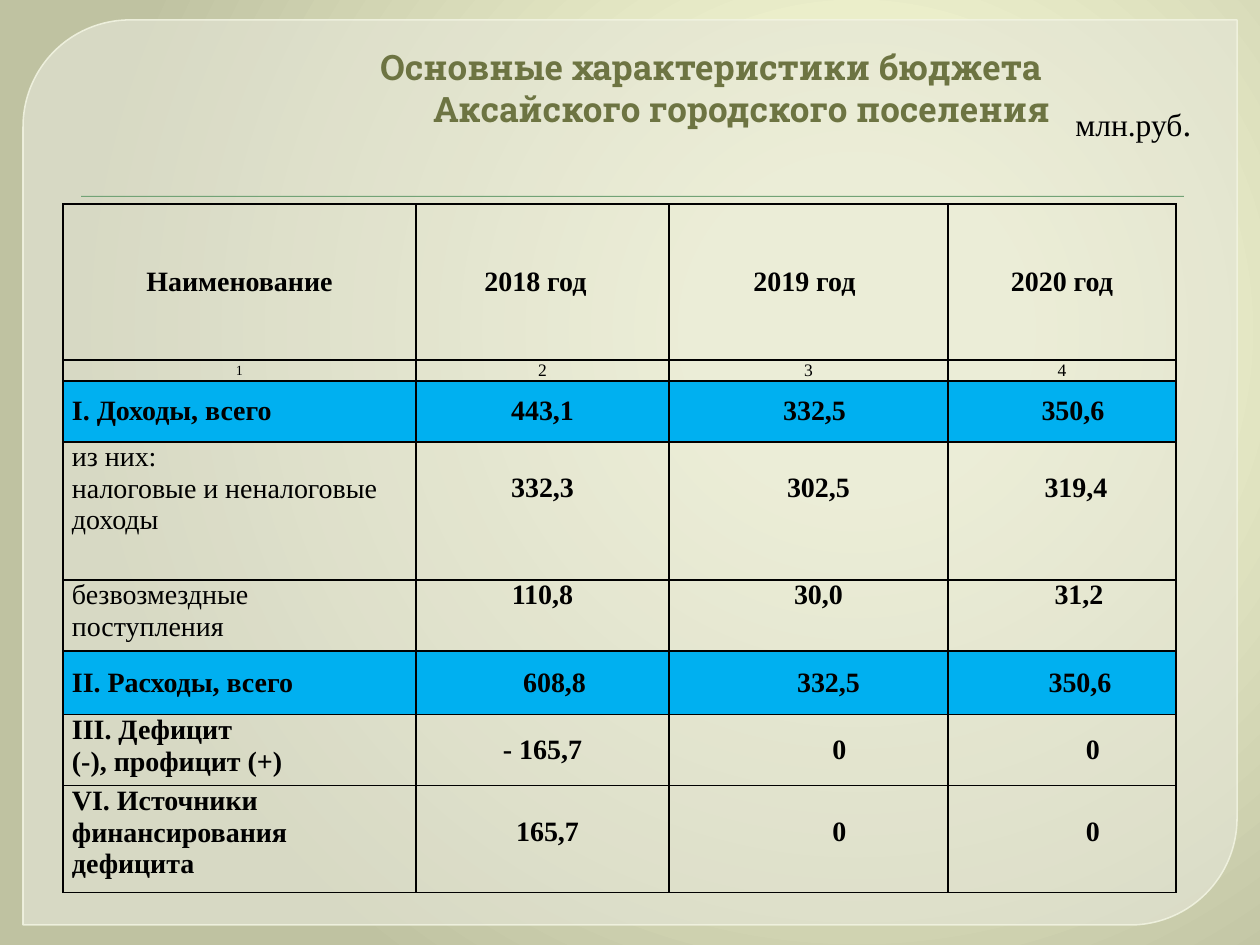
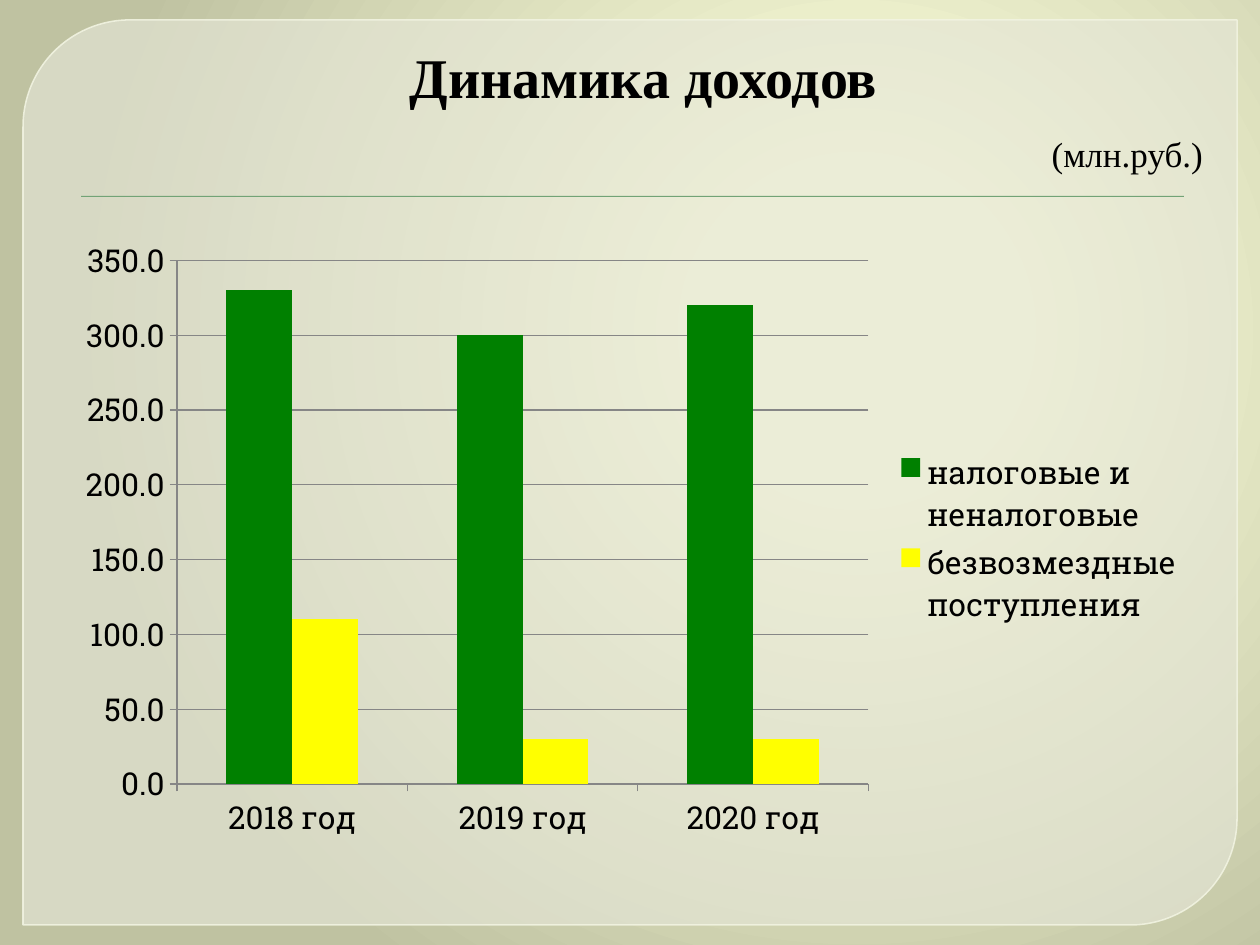
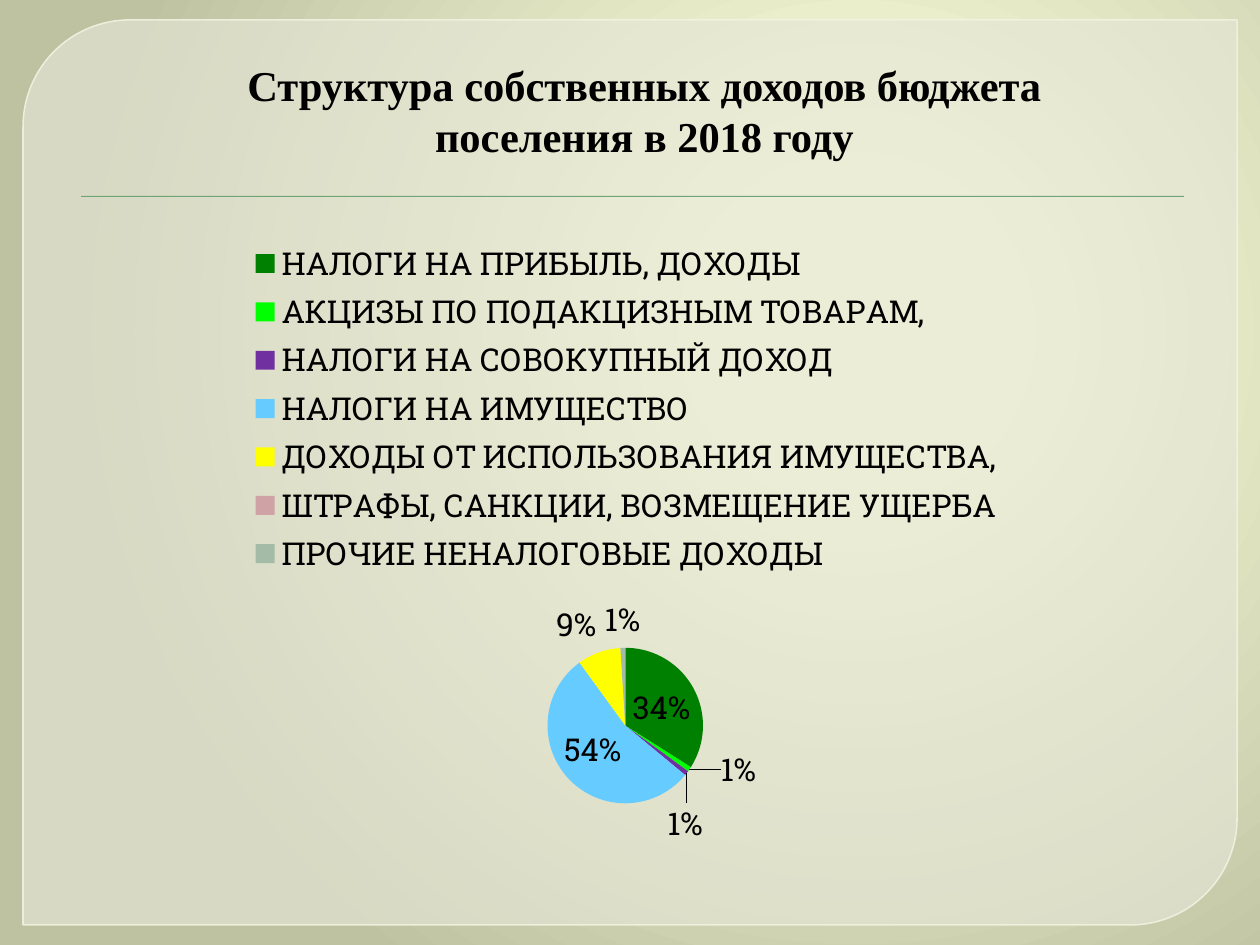
import pptx
import pptx.chart.data
import pptx.dml.color
import pptx.enum.chart
import pptx.enum.shapes
import pptx.enum.text
import pptx.oxml
import pptx.oxml.ns
import pptx.util

RGB = pptx.dml.color.RGBColor
ALIGN = pptx.enum.text.PP_ALIGN
ANCHOR = pptx.enum.text.MSO_ANCHOR
SHAPE = pptx.enum.shapes.MSO_SHAPE
CHART = pptx.enum.chart

PX = 914400 / 126  # EMU in one px
BLACK = RGB(0x00, 0x00, 0x00)
OLIVE = RGB(0x6D, 0x74, 0x42)
PANEL = RGB(0xE5, 0xE6, 0xD7)
PANEL_EDGE = RGB(0xF2, 0xF4, 0xE2)
RULE = RGB(0x72, 0xA3, 0x76)
TOTAL_ROW = RGB(0x00, 0xB0, 0xF0)
GRID = RGB(0x86, 0x86, 0x86)
GREEN = RGB(0x00, 0x80, 0x00)
YELLOW = RGB(0xFF, 0xFF, 0x00)
SLICES = [GREEN, RGB(0x00, 0xFF, 0x00), RGB(0x70, 0x30, 0xA0), RGB(0x66, 0xCC, 0xFF),
          YELLOW, RGB(0xCF, 0xA3, 0xA5), RGB(0xA3, 0xBB, 0xA7)]
GRADIENT = [(0, "FBFED9"), (20, "F9FCD8"), (100, "BFC2A1")]
SERIF, SLAB = "Times New Roman", "Roboto Slab"

CHART_BOX = (63, 227, 1134, 624)
LINE = 31  # height of one table text line
YEARS = ["2018 год", "2019 год", "2020 год"]


def emu(*lengths):
    return [pptx.util.Emu(round(n * PX)) for n in lengths]


def add_text(p, text, size=16, font=SERIF, color=BLACK, bold=False, align=None):
    r = p.add_run()
    r.text = text
    r.font.size = pptx.util.Pt(size)
    r.font.name = font
    r.font.bold = bold
    r.font.color.rgb = color
    if align is not None:
        p.alignment = align


def paragraphs(tf, count):
    return [tf.paragraphs[0]] + [tf.add_paragraph() for _ in range(count - 1)]


def set_margins(target, left, top, right, bottom):
    (target.margin_left, target.margin_top,
     target.margin_right, target.margin_bottom) = emu(left, top, right, bottom)


def set_alpha(fill_parent, percent):
    color = fill_parent.xpath("./a:solidFill/a:srgbClr")[0]
    color.append(pptx.oxml.parse_xml(
        f'<a:alpha {pptx.oxml.ns.nsdecls("a")} val="{percent * 1000}"/>'))


def set_background(master):
    master.background.fill.gradient()
    old = master.element.xpath(".//p:bgPr/a:gradFill")[0]
    stops = "".join(f'<a:gs pos="{pos * 1000}"><a:srgbClr val="{color}"/></a:gs>'
                    for pos, color in GRADIENT)
    old.getparent().replace(old, pptx.oxml.parse_xml(
        f'<a:gradFill {pptx.oxml.ns.nsdecls("a")}><a:gsLst>{stops}</a:gsLst>'
        '<a:path path="circle"><a:fillToRect l="68000" t="35000" r="32000" b="65000"/>'
        '</a:path></a:gradFill>'))


def add_plain_shape(s, kind, box, color):
    sp = s.shapes.add_shape(kind, *emu(*box))
    sp.shadow.inherit = False
    sp.fill.solid()
    sp.fill.fore_color.rgb = color
    sp.line.fill.background()
    return sp


def decorate_layout(layout, s):
    """Draw the panel and the rule on a slide and move them to its layout."""
    panel = add_plain_shape(s, SHAPE.ROUND_2_DIAG_RECTANGLE, (23, 20, 1214, 905), PANEL)
    panel.adjustments[0], panel.adjustments[1] = 0.118, 0
    panel.line.color.rgb = PANEL_EDGE
    panel.line.width = pptx.util.Pt(0.87)
    set_alpha(panel._element.spPr, 65)
    set_alpha(panel._element.spPr.ln, 88)
    rule = add_plain_shape(s, SHAPE.RECTANGLE, (81, 196, 1103, 1), RULE)
    for i, sp in enumerate((panel, rule)):
        sp._element.nvSpPr.cNvPr.set("id", str(100 + i))
        layout.element.cSld.spTree.insert(2 + i, sp._element)


def set_title(s, box, lines, bottom=6, **fmt):
    """Fill the title placeholder, one paragraph a line, and return its text frame."""
    sp = s.shapes.title
    sp.left, sp.top, sp.width, sp.height = emu(*box)
    tf = sp.text_frame
    tf.auto_size = pptx.enum.text.MSO_AUTO_SIZE.NONE
    tf.word_wrap = True
    tf.vertical_anchor = ANCHOR.BOTTOM
    set_margins(tf, 13, 6, 13, bottom)
    for p, line in zip(paragraphs(tf, len(lines)), lines):
        add_text(p, line, bold=True, **fmt)
    return tf


def set_borders(cell):
    tc_pr = cell._tc.get_or_add_tcPr()
    for i, side in enumerate("LRTB"):
        tc_pr.insert(i, pptx.oxml.parse_xml(
            f'<a:ln{side} {pptx.oxml.ns.nsdecls("a")} w="9525"><a:solidFill>'
            f'<a:srgbClr val="{BLACK}"/></a:solidFill></a:ln{side}>'))


def fill_cell(cell, lines, anchor=ANCHOR.MIDDLE, top=0, shift=0, fill=None, **fmt):
    """Write the lines into a cell; shift moves centred text right or left."""
    cell.vertical_anchor = anchor
    set_margins(cell, 9 + max(0, 2 * shift), top, 9 + max(0, -2 * shift), 0)
    if fill is None:
        cell.fill.background()
    else:
        cell.fill.solid()
        cell.fill.fore_color.rgb = fill
    set_borders(cell)
    for p, line in zip(paragraphs(cell.text_frame, len(lines)), lines):
        add_text(p, line, **fmt)


def add_budget_table(s, left, top):
    widths = [353, 253, 279, 228]
    heights = [156, 20, 61, 138, 71, 64, 71, 107]
    # label lines, label bold, label anchor, values, value shifts, value anchor, value top, fill
    body = [
        (["I. Доходы, всего"], True, ANCHOR.MIDDLE,
         ["443,1", "332,5", "350,6"], [0, 6, 11], ANCHOR.MIDDLE, 0, TOTAL_ROW),
        (["из них:", "налоговые и неналоговые доходы"], False, ANCHOR.TOP,
         ["332,3", "302,5", "319,4"], [0, 10, 14], ANCHOR.TOP, LINE, None),
        (["безвозмездные поступления"], False, ANCHOR.TOP,
         ["110,8", "30,0", "31,2"], [0, 10, 17], ANCHOR.TOP, 0, None),
        (["II. Расходы, всего"], True, ANCHOR.MIDDLE,
         ["608,8", "332,5", "350,6"], [12, 20, 18], ANCHOR.MIDDLE, 0, TOTAL_ROW),
        (["III. Дефицит", "(-), профицит (+)"], True, ANCHOR.TOP,
         ["- 165,7", "0", "0"], [0, 31, 31], ANCHOR.MIDDLE, 0, None),
        (["VI. Источники финансирования дефицита"], True, ANCHOR.TOP,
         ["165,7", "0", "0"], [5, 31, 31], ANCHOR.TOP, LINE, None),
    ]
    frame = s.shapes.add_table(len(heights), len(widths),
                               *emu(left, top, sum(widths), sum(heights)))
    table = frame.table
    table.first_row = table.horz_banding = False
    for column, width in zip(table.columns, emu(*widths)):
        column.width = width
    for row, height in zip(table.rows, emu(*heights)):
        row.height = height

    for c, (name, shift) in enumerate(zip(["Наименование"] + YEARS, [0, -7, -4, 0])):
        fill_cell(table.cell(0, c), [name], shift=shift, bold=True, align=ALIGN.CENTER)
        fill_cell(table.cell(1, c), [str(c + 1)], size=10 if c else 8, align=ALIGN.CENTER)
    for r, row in enumerate(body, 2):
        label, bold, label_anchor, values, shifts, anchor, value_top, fill = row
        fill_cell(table.cell(r, 0), label, label_anchor, fill=fill, bold=bold, align=ALIGN.LEFT)
        for c, (value, shift) in enumerate(zip(values, shifts), 1):
            fill_cell(table.cell(r, c), [value], anchor, value_top, shift, fill,
                      bold=True, align=ALIGN.CENTER)


def add_styled_chart(s, box, kind, categories, series, legend_position):
    data = pptx.chart.data.CategoryChartData(number_format="0.0")
    data.categories = categories
    for name, values in series:
        data.add_series(name, values)
    chart = s.shapes.add_chart(kind, *emu(*box), data).chart
    chart.has_title = False
    chart.font.size = pptx.util.Pt(18)
    chart.font.name = SLAB
    chart.font.color.rgb = BLACK
    chart.has_legend = True
    chart.legend.position = legend_position
    chart.legend.include_in_layout = False
    return chart


def paint(item, color):
    item.format.fill.solid()
    item.format.fill.fore_color.rgb = color


def add_income_columns(s, box):
    chart = add_styled_chart(
        s, box, CHART.XL_CHART_TYPE.COLUMN_CLUSTERED, YEARS,
        [("налоговые и неналоговые", [330, 300, 320]),
         ("безвозмездные поступления", [110, 30, 30])],
        CHART.XL_LEGEND_POSITION.RIGHT)
    plot = chart.plots[0]
    plot.vary_by_categories = False
    plot.gap_width, plot.overlap = 150, 0
    for series, color in zip(plot.series, (GREEN, YELLOW)):
        paint(series, color)
    axis = chart.value_axis
    axis.minimum_scale, axis.maximum_scale, axis.major_unit = 0, 350, 50
    axis.has_major_gridlines = True
    axis.tick_labels.number_format = "0.0"
    axis.tick_labels.number_format_is_linked = False
    for part in (axis, chart.category_axis, axis.major_gridlines):
        part.format.line.color.rgb = GRID
        part.format.line.width = pptx.util.Pt(0.75)
    for part in (axis, chart.category_axis):
        part.major_tick_mark = CHART.XL_TICK_MARK.OUTSIDE


def add_income_pie(s, box):
    shares = {
        "НАЛОГИ НА ПРИБЫЛЬ, ДОХОДЫ": 34,
        "АКЦИЗЫ ПО ПОДАКЦИЗНЫМ ТОВАРАМ,": 1,
        "НАЛОГИ НА СОВОКУПНЫЙ ДОХОД": 1,
        "НАЛОГИ НА ИМУЩЕСТВО": 54,
        "ДОХОДЫ ОТ ИСПОЛЬЗОВАНИЯ ИМУЩЕСТВА, ": 9,
        "ШТРАФЫ, САНКЦИИ, ВОЗМЕЩЕНИЕ УЩЕРБА": 0,
        "ПРОЧИЕ НЕНАЛОГОВЫЕ ДОХОДЫ": 1,
    }
    chart = add_styled_chart(s, box, CHART.XL_CHART_TYPE.PIE, list(shares),
                             [("Доходы", list(shares.values()))],
                             CHART.XL_LEGEND_POSITION.TOP)
    plot = chart.plots[0]
    plot.vary_by_categories = True
    for i, color in enumerate(SLICES):
        paint(plot.series[0].points[i], color)
    plot.has_data_labels = True
    labels = plot.data_labels
    labels.show_percentage, labels.show_value = True, False
    labels.number_format, labels.number_format_is_linked = "0%", False
    labels.position = CHART.XL_LABEL_POSITION.BEST_FIT


def build_budget_slide(s):
    set_title(s, (147, 26, 916, 110),
              ["Основные характеристики бюджета ", "Аксайского городского поселения"],
              size=20, font=SLAB, color=OLIVE, align=ALIGN.RIGHT)
    unit = s.shapes.add_textbox(*emu(1063, 95, 197, 55)).text_frame
    unit.word_wrap = True
    add_text(unit.paragraphs[0], "млн.руб", size=18)
    add_text(unit.paragraphs[0], ".", size=20)
    add_budget_table(s, 63, 204)


def build_dynamics_slide(s):
    tf = set_title(s, (71, 20, 1145, 165), ["Динамика доходов"], bottom=10,
                   size=32, align=ALIGN.CENTER)
    p = tf.add_paragraph()
    p.space_before = pptx.util.Pt(13)
    add_text(p, "(млн.руб.)", size=20, align=ALIGN.RIGHT)
    add_income_columns(s, CHART_BOX)


def build_structure_slide(s):
    set_title(s, (46, 63, 1197, 141),
              ["Структура собственных доходов бюджета", "поселения в 2018 году"],
              bottom=43, size=24.3, align=ALIGN.CENTER)
    add_income_pie(s, CHART_BOX)


def main():
    prs = pptx.Presentation()
    prs.slide_width, prs.slide_height = emu(1260, 945)
    layout = prs.slide_layouts.get_by_name("Title Only")
    set_background(prs.slide_master)
    builders = [build_budget_slide, build_dynamics_slide, build_structure_slide]
    slides = [prs.slides.add_slide(layout) for _ in builders]
    decorate_layout(layout, slides[0])
    for build, s in zip(builders, slides):
        build(s)
    prs.save("out.pptx")


if __name__ == "__main__":
    main()
